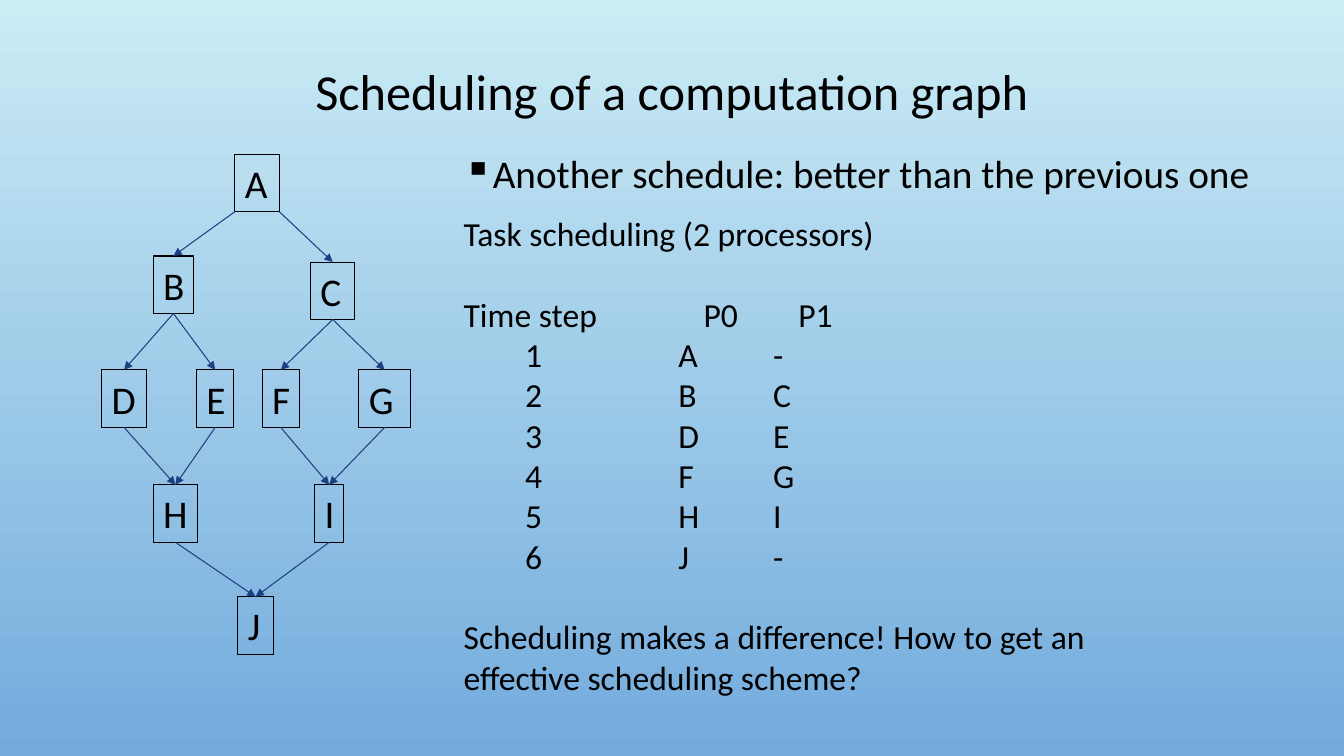
from dataclasses import dataclass
from typing import Any

from lxml import etree
from pptx import Presentation
from pptx.dml.color import RGBColor
from pptx.enum import shapes, text
from pptx import util as u
from pptx.oxml import ns


@dataclass(frozen=True)
class Theme:
    font: str = "Calibri"
    ink: str = "000000"
    arrow: str = "1F3F83"
    sky_top: str = "CBECF5"
    sky_bottom: str = "73ABDD"
    title_size: int = 36
    body_size: int = 28
    schedule_size: int = 24
    line_width: float = 0.75


@dataclass(frozen=True)
class Task:
    name: str
    left: float
    top: float
    width: float


@dataclass(frozen=True)
class Line:
    words: str
    size: int
    layout: dict[str, Any]
    tabs: tuple[float, ...] = ()
    bullet: str = ""


THEME = Theme()
BOX_HEIGHT = 0.57
ROOT = "A"
TASKS = [
    Task("A", 2.33, 1.53, 0.44),
    Task("B", 1.52, 2.54, 0.40),
    Task("C", 3.08, 2.60, 0.44),
    Task("D", 1.01, 3.67, 0.44),
    Task("E", 1.95, 3.67, 0.37),
    Task("F", 2.60, 3.67, 0.37),
    Task("G", 3.56, 3.67, 0.51),
    Task("H", 1.52, 4.81, 0.44),
    Task("I", 3.12, 4.81, 0.29),
    Task("J", 2.36, 5.92, 0.35),
]
DEPENDENCIES = "AB AC BD BE CF CG DH EH FI GI HJ IJ".split()
SCHEDULE = ["A-", "BC", "DE", "FG", "HI", "J-"]
HEADER_TABS = (2.38, 3.32)
ROW_TABS = (0.61, 2.13, 3.07)
SECTION_GAP = u.Pt(29)


def set_format(target: Any, values: dict[str, Any]) -> None:
    for attribute, value in values.items():
        setattr(target, attribute, value)


def color(value: str) -> RGBColor:
    return RGBColor.from_string(value)


def add_child(parent: Any, tag: str, **attributes: str) -> Any:
    return etree.SubElement(parent, ns.qn(tag), attributes)


def write_line(paragraph: Any, line: Line) -> None:
    set_format(paragraph, {"alignment": text.PP_ALIGN.LEFT} | line.layout)
    properties = paragraph._p.get_or_add_pPr()
    if line.bullet:
        properties.set("marL", str(u.Inches(0.25)))
        properties.set("indent", str(u.Inches(-0.25)))
        bullet_color = add_child(properties, "a:buClr")
        add_child(bullet_color, "a:srgbClr", val=THEME.ink)
        add_child(properties, "a:buChar", char=line.bullet)
    if line.tabs:
        stops = add_child(properties, "a:tabLst")
        for position in line.tabs:
            add_child(stops, "a:tab", pos=str(u.Inches(position)), algn="l")
    run = paragraph.add_run()
    run.text = line.words
    set_format(run.font, {"name": THEME.font, "size": u.Pt(line.size)})
    run.font.color.rgb = color(THEME.ink)


def fill_frame(frame: Any, lines: list[Line], **layout: Any) -> None:
    set_format(frame, {"word_wrap": True} | layout)
    for index, line in enumerate(lines):
        write_line(frame.add_paragraph() if index else frame.paragraphs[0], line)


def add_text(slide: Any, bounds: tuple[float, ...], lines: list[Line], **layout: Any) -> None:
    box = slide.shapes.add_textbox(*map(u.Inches, bounds))
    fill_frame(box.text_frame, lines, **layout)


def add_task(slide: Any, task: Task) -> Any:
    bounds = map(u.Inches, (task.left, task.top, task.width, BOX_HEIGHT))
    box = slide.shapes.add_shape(shapes.MSO_SHAPE.RECTANGLE, *bounds)
    box.shadow.inherit = False
    box.fill.background()
    box.line.color.rgb = color(THEME.ink)
    box.line.width = u.Pt(THEME.line_width)
    fill_frame(box.text_frame, [Line(task.name, THEME.body_size, {})],
               word_wrap=False, vertical_anchor=text.MSO_ANCHOR.TOP)
    return box


def add_dependency(slide: Any, parent: Any, child: Any, from_corner: bool) -> None:
    child_center = child.left + child.width // 2
    corner = parent.left if child_center < parent.left else parent.left + parent.width
    arrow = slide.shapes.add_connector(
        shapes.MSO_CONNECTOR.STRAIGHT,
        corner, parent.top + parent.height, child_center, child.top)
    if not from_corner:
        arrow.begin_connect(parent, 2)
    arrow.end_connect(child, 0)
    arrow.line.color.rgb = color(THEME.arrow)
    arrow.line.width = u.Pt(THEME.line_width)
    add_child(arrow.line._get_or_add_ln(), "a:tailEnd", type="triangle")
    add_child(arrow._element.spPr, "a:effectLst")


def main() -> None:
    deck = Presentation()
    set_format(deck, {"slide_width": u.Inches(13.33), "slide_height": u.Inches(7.5)})
    slide = deck.slides.add_slide(deck.slide_layouts[6])

    # Sky gradient, top to bottom
    sky = slide.background.fill
    sky.gradient()
    sky.gradient_angle = 270
    for stop, shade in zip(sky.gradient_stops, (THEME.sky_top, THEME.sky_bottom)):
        stop.color.rgb = color(shade)

    # Title and lead bullet
    title = Line("Scheduling of a computation graph", THEME.title_size,
                 {"alignment": text.PP_ALIGN.CENTER, "line_spacing": 0.9})
    add_text(slide, (1, 0.32, 11.33, 1.23), [title],
             vertical_anchor=text.MSO_ANCHOR.MIDDLE)
    lead = Line("Another schedule: better than the previous one", THEME.body_size,
                {"line_spacing": 1.1}, bullet="▪")
    add_text(slide, (4.5, 1.39, 8.32, 0.65), [lead])

    # Computation graph
    boxes = {task.name: add_task(slide, task) for task in TASKS}
    for parent, child in DEPENDENCIES:
        add_dependency(slide, boxes[parent], boxes[child], parent == ROOT)

    # Schedule by time step and closing question
    size = THEME.schedule_size
    gap = {"space_before": SECTION_GAP}
    rows = [Line(f"\t{step}\t{first}\t{second}", size, {}, ROW_TABS)
            for step, (first, second) in enumerate(SCHEDULE, start=1)]
    add_text(slide, (4.5, 2.06, 6.67, 4.95), [
        Line("Task scheduling (2 processors)", size, {}),
        Line("Time step\tP0\tP1", size, gap, HEADER_TABS),
        *rows,
        Line("Scheduling makes a difference! How to get an effective scheduling scheme?",
             size, gap),
    ])

    deck.save("out.pptx")


if __name__ == "__main__":
    main()
